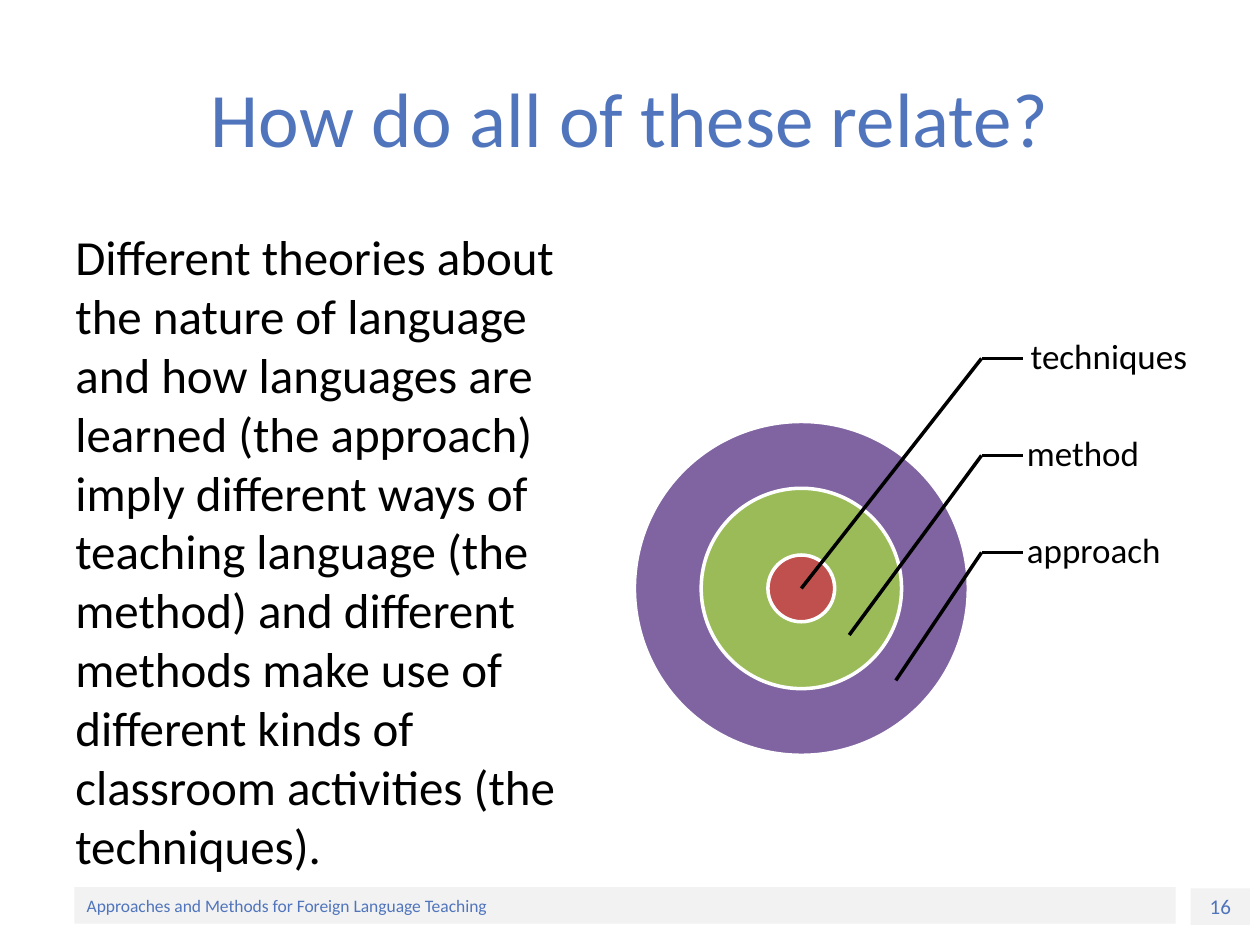
from lxml.etree import SubElement
from pptx import Presentation
from pptx.dml.color import RGBColor
from pptx.enum.shapes import MSO_CONNECTOR, MSO_SHAPE
from pptx.enum.text import MSO_ANCHOR, PP_ALIGN
from pptx.oxml.ns import qn
from pptx.util import Inches, Pt

BLUE, BLACK, WHITE, GREY = "5075BC", "000000", "FFFFFF", "F2F2F2"
CENTER_X, CENTER_Y = 6.36, 4.67
RINGS = [(2.65, "8064A2"), (1.59, "9BBB59"), (0.53, "C0504D")]
LABELS = [
    ("techniques", 8.02, 1.53, (6.36, 4.67)),
    ("method", 7.99, 1.32, (6.74, 5.04)),
    ("approach", 7.99, 1.32, (7.11, 5.4)),
]
BODY = (
    "Different theories about the nature of language and how languages are "
    "learned (the approach) imply different ways of teaching language (the "
    "method) and different methods make use of different kinds of classroom "
    "activities (the techniques)."
)


def rgb(value):
    """Turn a hex string into a colour."""
    return RGBColor.from_string(value)


def set_text(sp, text, size, color, frame=None, para=None):
    """Write one formatted paragraph into a shape."""
    tf = sp.text_frame
    tf.word_wrap = True
    p = tf.paragraphs[0]
    for target, values in ((tf, frame), (p, para)):
        for name, value in (values or {}).items():
            setattr(target, name, value)
    r = p.add_run()
    r.text = text
    for name, value in {"name": "Calibri", "size": Pt(size)}.items():
        setattr(r.font, name, value)
    r.font.color.rgb = rgb(color)


def add_text(s, box, text, size, color, frame=None, para=None):
    """Add a text box."""
    sp = s.shapes.add_textbox(*map(Inches, box))
    set_text(sp, text, size, color, frame, para)


def add_filled(s, kind, box, fill, line=None):
    """Add a preset shape with a flat fill and an optional outline."""
    sp = s.shapes.add_shape(kind, *map(Inches, box))
    sp.shadow.inherit = False
    sp.fill.solid()
    sp.fill.fore_color.rgb = rgb(fill)
    if line:
        sp.line.color.rgb = rgb(line)
        sp.line.width = Pt(2)
    else:
        sp.line.fill.background()
    return sp


def add_line(s, start, end):
    """Add a straight black line."""
    sp = s.shapes.add_connector(MSO_CONNECTOR.STRAIGHT, *map(Inches, start + end))
    sp.line.color.rgb = rgb(BLACK)
    sp.line.width = Pt(2)
    SubElement(sp._element.spPr, qn("a:effectLst"))


def add_footer(s):
    """Add the footer bar and the slide number."""
    middle = {"vertical_anchor": MSO_ANCHOR.MIDDLE}
    sp = add_filled(s, MSO_SHAPE.RECTANGLE, (9.45, 7.05, 0.47, 0.29), GREY)
    set_text(sp, "16", 12, BLUE, middle, {"alignment": PP_ALIGN.CENTER})
    sp = add_filled(s, MSO_SHAPE.RECTANGLE, (0.59, 7.04, 8.74, 0.29), GREY)
    set_text(sp, "Approaches and Methods for Foreign Language Teaching", 10, BLUE,
             middle, {"alignment": PP_ALIGN.LEFT})


def add_target(s):
    """Add the concentric rings with their labels and leader lines."""
    for size, color in RINGS:
        box = (CENTER_X - size / 2, CENTER_Y - size / 2, size, size)
        add_filled(s, MSO_SHAPE.OVAL, box, color, WHITE)
    frame = {"vertical_anchor": MSO_ANCHOR.MIDDLE, "margin_left": Inches(0.16)}
    for side in ("right", "top", "bottom"):
        frame[f"margin_{side}"] = Inches(0.03)
    height = 0.77
    for i, (text, left, width, tip) in enumerate(LABELS):
        top = 2.46 + i * height
        elbow = (7.79, top + height / 2)
        add_text(s, (left, top, width, height), text, 20, BLACK, frame,
                 {"line_spacing": 0.9})
        add_line(s, elbow, (8.12, elbow[1]))
        add_line(s, elbow, tip)


def main():
    """Build the slide and save it."""
    prs = Presentation()
    prs.slide_width, prs.slide_height = Inches(10), Inches(7.5)
    s = prs.slides.add_slide(prs.slide_layouts[6])
    add_footer(s)
    add_text(s, (0.5, 0.3, 9, 1.25), "How do all of these relate?", 44, BLUE,
             {"vertical_anchor": MSO_ANCHOR.MIDDLE}, {"alignment": PP_ALIGN.CENTER})
    add_text(s, (0.5, 1.75, 4.42, 4.95), BODY, 28, BLACK)
    add_target(s)
    prs.save("out.pptx")


if __name__ == "__main__":
    main()
